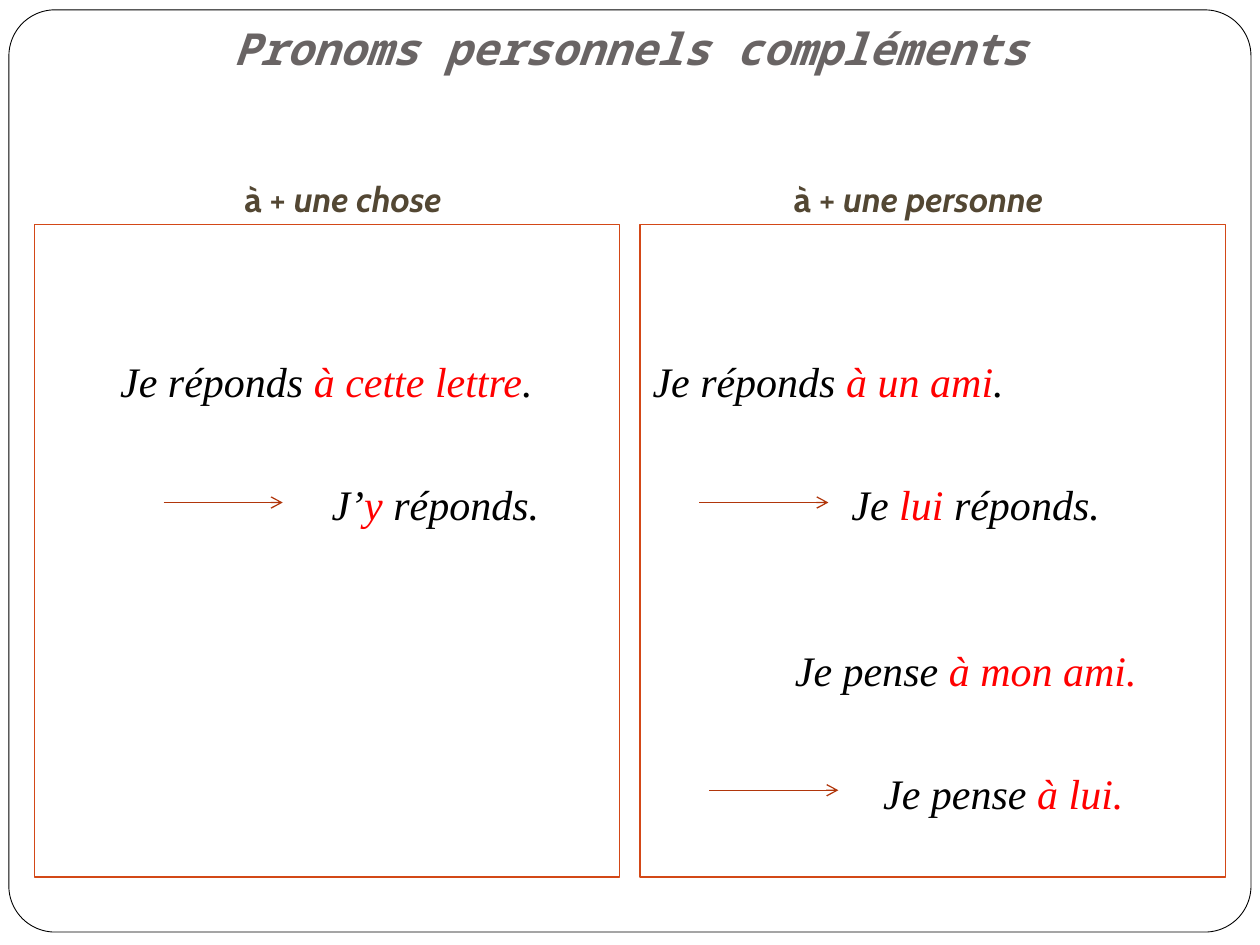
from pptx import Presentation
from pptx.dml.color import RGBColor
from pptx.enum.shapes import MSO_CONNECTOR as Connector, MSO_SHAPE as Shape
from pptx.enum.text import MSO_ANCHOR as Anchor, MSO_AUTO_SIZE as AutoSize, PP_ALIGN as Align
from pptx.oxml.ns import qn
from pptx.util import Cm, Pt
from lxml.etree import SubElement

WHITE = RGBColor(0xFF, 0xFF, 0xFF)
BLACK = RGBColor(0, 0, 0)
RED = RGBColor(0xFF, 0, 0)
GREY = RGBColor(0x69, 0x64, 0x64)
BROWN = RGBColor(0x53, 0x47, 0x33)
ORANGE = RGBColor(0xD3, 0x48, 0x17)
RUST = RGBColor(0xB1, 0x36, 0x0B)


class Lesson:
    title_font = "Noto Sans Mono"
    heading_font = "Cabin"
    example_font = "Times New Roman"

    def __init__(self, slide):
        self.slide = slide

    def place(self, index, left, top, width, height):
        holder = self.slide.placeholders[index]
        holder.left, holder.top = Cm(left), Cm(top)
        holder.width, holder.height = Cm(width), Cm(height)
        holder.text_frame.auto_size = AutoSize.NONE
        holder.text_frame.word_wrap = True
        return holder

    def add_words(self, paragraph, text, font, size, color, bold=False, italic=False):
        run = paragraph.add_run()
        run.text = text
        run.font.name, run.font.size = font, Pt(size)
        run.font.bold, run.font.italic = bold, italic
        run.font.color.rgb = color

    def border(self):
        border = self.slide.shapes.add_shape(
            Shape.ROUNDED_RECTANGLE, Cm(0.18), Cm(0.2), Cm(25.04), Cm(18.59))
        border.adjustments[0] = 0.05
        border.shadow.inherit = False
        border.fill.solid()
        border.fill.fore_color.rgb = WHITE
        border.line.color.rgb = BLACK
        border.line.width = Pt(0.5)
        self.slide.shapes.element.insert(2, border.element)  # behind the placeholders

    def title(self, text):
        frame = self.place(0, 1.27, 0.53, 22.86, 2.21).text_frame
        frame.vertical_anchor = Anchor.BOTTOM
        frame.margin_top, frame.margin_bottom = 0, Cm(1.24)
        line = frame.paragraphs[0]
        line.alignment = Align.CENTER
        self.add_words(line, text, self.title_font, 25.2, GREY, bold=True, italic=True)

    def heading(self, index, left, noun):
        frame = self.place(index, left, 2.72, 11.23, 1.83).text_frame
        frame.vertical_anchor = Anchor.BOTTOM
        line = frame.paragraphs[0]
        line.alignment = Align.CENTER
        self.add_words(line, "à ", self.heading_font, 20, BROWN, bold=True)
        self.add_words(line, "+ ", self.heading_font, 20, BROWN)
        self.add_words(line, noun, self.heading_font, 20, BROWN, bold=True, italic=True)

    def examples(self, index, left, sentences):
        """Each sentence is (indent in cm, space before in pt, parts); odd parts are red."""
        panel = self.place(index, left, 4.52, 11.8, 13.16)
        panel.line.color.rgb = ORANGE
        panel.line.width = Pt(0.75)
        frame = panel.text_frame
        frame.vertical_anchor = Anchor.TOP
        frame.margin_top = Cm(2.64)
        for number, (indent, gap, parts) in enumerate(sentences):
            line = frame.add_paragraph() if number else frame.paragraphs[0]
            line.space_before = Pt(gap)
            properties = line._p.get_or_add_pPr()
            properties.set("marL", str(Cm(indent)))
            properties.set("indent", "0")
            SubElement(properties, qn("a:buNone"))
            for position, part in enumerate(parts):
                color = RED if position % 2 else BLACK
                self.add_words(line, part, self.example_font, 24, color, italic=True)

    def arrow(self, left, top, length):
        arrow = self.slide.shapes.add_connector(
            Connector.STRAIGHT, Cm(left), Cm(top), Cm(left + length), Cm(top))
        arrow.line.color.rgb = RUST
        arrow.line.width = Pt(0.75)
        SubElement(arrow.line._get_or_add_ln(), qn("a:tailEnd"), type="arrow")
        SubElement(arrow.element.spPr, qn("a:effectLst"))


def main():
    deck = Presentation()
    deck.slide_width, deck.slide_height = Cm(25.4), Cm(19.05)
    comparison = deck.slide_layouts.get_by_name("Comparison")
    lesson = Lesson(deck.slides.add_slide(comparison))

    lesson.border()
    lesson.title("Pronoms personnels compléments")
    lesson.heading(1, 1.3, "une chose")
    lesson.heading(3, 12.9, "une personne")
    lesson.examples(2, 0.69, [
        (1.48, 0, ["Je réponds ", "à cette lettre", "."]),
        (5.74, 41.5, ["J’", "y ", "réponds."]),
    ])
    lesson.examples(4, 12.9, [
        (0, 0, ["Je réponds ", "à un ami", "."]),
        (4.01, 41.5, ["Je ", "lui ", "réponds."]),
        (2.87, 66, ["Je pense ", "à mon ami."]),
        (4.65, 41.5, ["Je pense ", "à lui."]),
    ])
    for left, top, length in [(14.1, 10.13, 2.6), (3.3, 10.13, 2.4), (14.3, 15.93, 2.6)]:
        lesson.arrow(left, top, length)

    deck.save("out.pptx")


if __name__ == "__main__":
    main()
